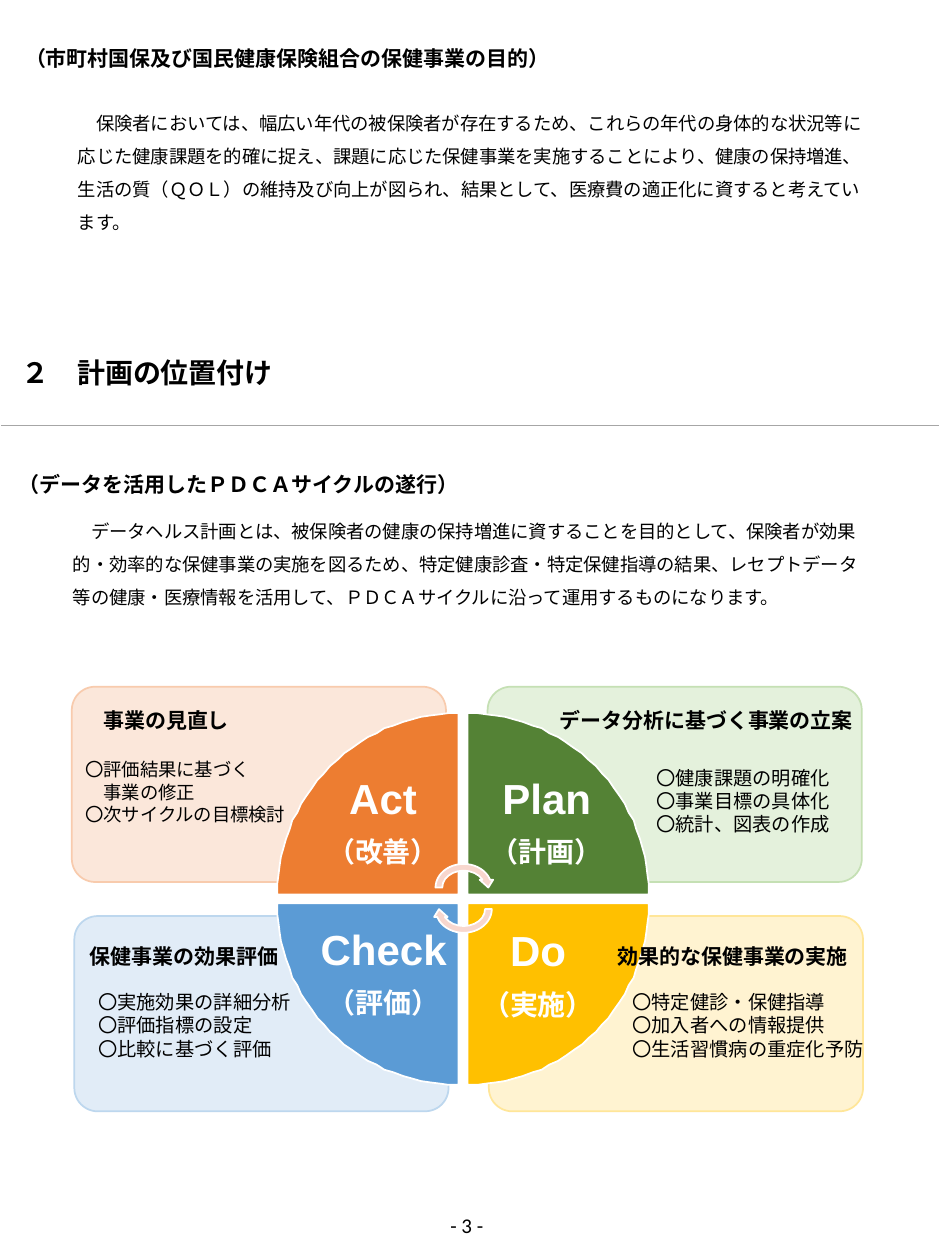
import math

import pptx
import pptx.dml.color
import pptx.enum.dml
import pptx.enum.lang
import pptx.enum.shapes
import pptx.enum.text
import pptx.oxml.ns
import pptx.util
from lxml import etree

RGBColor = pptx.dml.color.RGBColor
Shape = pptx.enum.shapes.MSO_SHAPE
Align = pptx.enum.text.PP_ALIGN
Anchor = pptx.enum.text.MSO_ANCHOR
qn = pptx.oxml.ns.qn

PX = 9144
JAPANESE_FONT = "Noto Sans CJK JP"
BLACK = RGBColor(0x00, 0x00, 0x00)
WHITE = RGBColor(0xFF, 0xFF, 0xFF)
GRAY = RGBColor(0xA6, 0xA6, 0xA6)
PINK = RGBColor(0xF8, 0xD7, 0xCE)
ORANGE = RGBColor(0xED, 0x7D, 0x31)
ORANGE_PALE = RGBColor(0xFB, 0xE5, 0xD6)
ORANGE_EDGE = RGBColor(0xF8, 0xCB, 0xAD)
GREEN = RGBColor(0x54, 0x82, 0x35)
GREEN_PALE = RGBColor(0xE2, 0xF0, 0xD9)
GREEN_EDGE = RGBColor(0xC5, 0xE0, 0xB4)
YELLOW = RGBColor(0xFF, 0xC0, 0x00)
YELLOW_PALE = RGBColor(0xFF, 0xF2, 0xCC)
YELLOW_EDGE = RGBColor(0xFF, 0xE6, 0x99)
BLUE = RGBColor(0x5B, 0x9B, 0xD5)
BLUE_PALE = RGBColor(0xDE, 0xEB, 0xF7)
BLUE_EDGE = RGBColor(0xBD, 0xD7, 0xEE)

PANEL_WIDTH, PANEL_HEIGHT = 297, 155
RADIUS = 144
WHEEL_BOX = (220, 566, 295, 295)

STAGES = [
    dict(name="Act", japanese="（改善）", corner=(0, 0), label=(29, 46, 110, 85),
         colors=(ORANGE, ORANGE_PALE, ORANGE_EDGE), panel=(57, 545),
         heading="事業の見直し", heading_box=(15, 1, 121, 38),
         items=["〇評価結果に基づく", "　事業の修正", "〇次サイクルの目標検討"],
         items_box=(1, 52, 182, 63), size=10.5, spacing=12.7),
    dict(name="Plan", japanese="（計画）", corner=(1, 0), label=(8, 46, 110, 85),
         colors=(GREEN, GREEN_PALE, GREEN_EDGE), panel=(387, 545),
         heading="データ分析に基づく事業の立案", heading_box=(47, 1, 256, 38),
         items=["〇健康課題の明確化", "〇事業目標の具体化", "〇統計、図表の作成"],
         items_box=(124, 58, 159, 66), size=11, spacing=13.3),
    dict(name="Do", japanese="（実施）", corner=(1, 1), label=(1, 16, 110, 119),
         colors=(YELLOW, YELLOW_PALE, YELLOW_EDGE), panel=(388, 727),
         heading="効果的な保健事業の実施", heading_box=(92, 6, 205, 38),
         items=["〇特定健診・保健指導", "〇加入者への情報提供", "〇生活習慣病の重症化予防"],
         items_box=(104, 54, 205, 66), size=11, spacing=13.3),
    dict(name="Check", japanese="（評価）", corner=(0, 1), label=(23, 15, 123, 119),
         colors=(BLUE, BLUE_PALE, BLUE_EDGE), panel=(59, 727),
         heading="保健事業の効果評価", heading_box=(2, 6, 172, 38),
         items=["〇実施効果の詳細分析", "〇評価指標の設定", "〇比較に基づく評価"],
         items_box=(9, 54, 174, 66), size=11, spacing=13.3),
]


def to_emu(box):
    return [round(length * PX) for length in box]


def offset(box, origin):
    left, top, width, height = box
    return left + origin[0], top + origin[1], width, height


def add_text(slide, box, lines, sizes=(12,), font="Arial", color=BLACK, bold=False,
             align=Align.LEFT, anchor=Anchor.TOP, spacing=None, wrap=False, shape=None):
    if shape is None:
        shape = slide.shapes.add_textbox(*to_emu(box))
    else:
        shape.left, shape.top, shape.width, shape.height = to_emu(box)
    frame = shape.text_frame
    frame.word_wrap = wrap
    frame.auto_size = pptx.enum.text.MSO_AUTO_SIZE.SHAPE_TO_FIT_TEXT
    frame.vertical_anchor = anchor
    for index, line in enumerate(lines):
        paragraph = frame.add_paragraph() if index else frame.paragraphs[0]
        paragraph.alignment = align
        if spacing:
            paragraph.line_spacing = pptx.util.Pt(spacing)
        run = paragraph.add_run()
        run.text = line
        run.font.size = pptx.util.Pt(sizes[min(index, len(sizes) - 1)])
        run.font.bold = bold
        run.font.color.rgb = color
        run.font.name = font
        run.font.language_id = pptx.enum.lang.MSO_LANGUAGE_ID.JAPANESE
        east_asian = etree.SubElement(run._r.get_or_add_rPr(), qn("a:ea"))
        east_asian.set("typeface", JAPANESE_FONT)
    return shape


def paint(shape, fill, line):
    shape.shadow.inherit = False
    shape.fill.solid()
    shape.fill.fore_color.rgb = fill
    shape.line.color.rgb = line
    shape.line.width = pptx.util.Pt(1)


def add_panel(slide, stage):
    box = (*stage["panel"], PANEL_WIDTH, PANEL_HEIGHT)
    shape = slide.shapes.add_shape(Shape.ROUNDED_RECTANGLE, *to_emu(box))
    shape.adjustments[0] = 0.12
    paint(shape, *stage["colors"][1:])
    color = shape.fill._xPr.find(qn("a:solidFill"))[0]
    etree.SubElement(color, qn("a:alpha")).set("val", "90000")


def add_panel_text(slide, stage):
    add_text(slide, offset(stage["heading_box"], stage["panel"]), [stage["heading"]],
             font=JAPANESE_FONT, bold=True, spacing=22)
    add_text(slide, offset(stage["items_box"], stage["panel"]), stage["items"],
             sizes=(stage["size"],), spacing=stage["spacing"])


def add_quadrant(slide, stage, origin, gap):
    column, row = stage["corner"]
    left, top = (start + index * (RADIUS + gap) for start, index in zip(origin, (column, row)))
    center_x, center_y = left + RADIUS * (1 - column), top + RADIUS * (1 - row)
    sign_x, sign_y = 2 * column - 1, 2 * row - 1
    angles = [math.radians(degree) for degree in range(0, 91, 3)]
    points = [(center_x + sign_x * RADIUS * math.cos(angle),
               center_y + sign_y * RADIUS * math.sin(angle)) for angle in angles]
    builder = slide.shapes.build_freeform(center_x, center_y, scale=PX)
    builder.add_line_segments(points, close=True)
    paint(builder.convert_to_shape(), stage["colors"][0], WHITE)
    return left, top


def add_wheel(slide, box):
    left, top, width, height = box
    gap = width - 2 * RADIUS
    corners = [add_quadrant(slide, stage, (left, top), gap) for stage in STAGES]
    for arrow_top, rotation in ((117, 0), (134, 180)):
        arrow_box = (left + 123, top + arrow_top, 50, 43)
        arrow = slide.shapes.add_shape(Shape.CIRCULAR_ARROW, *to_emu(arrow_box))
        arrow.rotation = rotation
        paint(arrow, PINK, WHITE)
    for stage, corner in zip(STAGES, corners):
        add_text(slide, offset(stage["label"], corner), [stage["name"], stage["japanese"]],
                 sizes=(24, 16), color=WHITE, bold=True, align=Align.CENTER, spacing=26)


def add_section(slide, heading_box, heading, body_box, body, font):
    add_text(slide, heading_box, [heading], font=font, bold=True, spacing=14.5)
    add_text(slide, body_box, [body], sizes=(10.5,), font=font, spacing=18.9, wrap=True)


def add_title(slide, box):
    add_text(slide, box, ["２　計画の位置付け"], sizes=(16,), bold=True,
             anchor=Anchor.MIDDLE, spacing=21, shape=slide.shapes.title)
    rule = slide.shapes.add_connector(pptx.enum.shapes.MSO_CONNECTOR.STRAIGHT,
                                      *to_emu((1, 338, 745, 338)))
    rule.line.color.rgb = GRAY
    rule.line.width = pptx.util.Pt(0.5)
    etree.SubElement(rule._element.spPr, qn("a:effectLst"))


def main():
    presentation = pptx.Presentation()
    presentation.slide_width, presentation.slide_height = to_emu((750, 1000))
    slide = presentation.slides.add_slide(presentation.slide_layouts[5])
    add_section(
        slide, (10, 31, 441, 30), "（市町村国保及び国民健康保険組合の保健事業の目的）",
        (52, 75, 645, 114),
        "　保険者においては、幅広い年代の被保険者が存在するため、これらの年代の身体的な状況等に"
        "応じた健康課題を的確に捉え、課題に応じた保健事業を実施することにより、健康の保持増進、"
        "生活の質（ＱＯＬ）の維持及び向上が図られ、結果として、医療費の適正化に資すると考えています。",
        JAPANESE_FONT)
    add_title(slide, (7, 276, 222, 37))
    add_section(
        slide, (5, 369, 374, 30), "（データを活用したＰＤＣＡサイクルの遂行）",
        (48, 399, 645, 87),
        "　データヘルス計画とは、被保険者の健康の保持増進に資することを目的として、保険者が効果"
        "的・効率的な保健事業の実施を図るため、特定健康診査・特定保健指導の結果、レセプトデータ等"
        "の健康・医療情報を活用して、ＰＤＣＡサイクルに沿って運用するものになります。",
        "Calibri")
    for stage in STAGES:
        add_panel(slide, stage)
    add_wheel(slide, WHEEL_BOX)
    for stage in STAGES:
        add_panel_text(slide, stage)
    add_text(slide, (347, 957, 47, 30), ["- 3 -"], font="Calibri",
             align=Align.CENTER, anchor=Anchor.MIDDLE)
    presentation.save("out.pptx")


if __name__ == "__main__":
    main()
